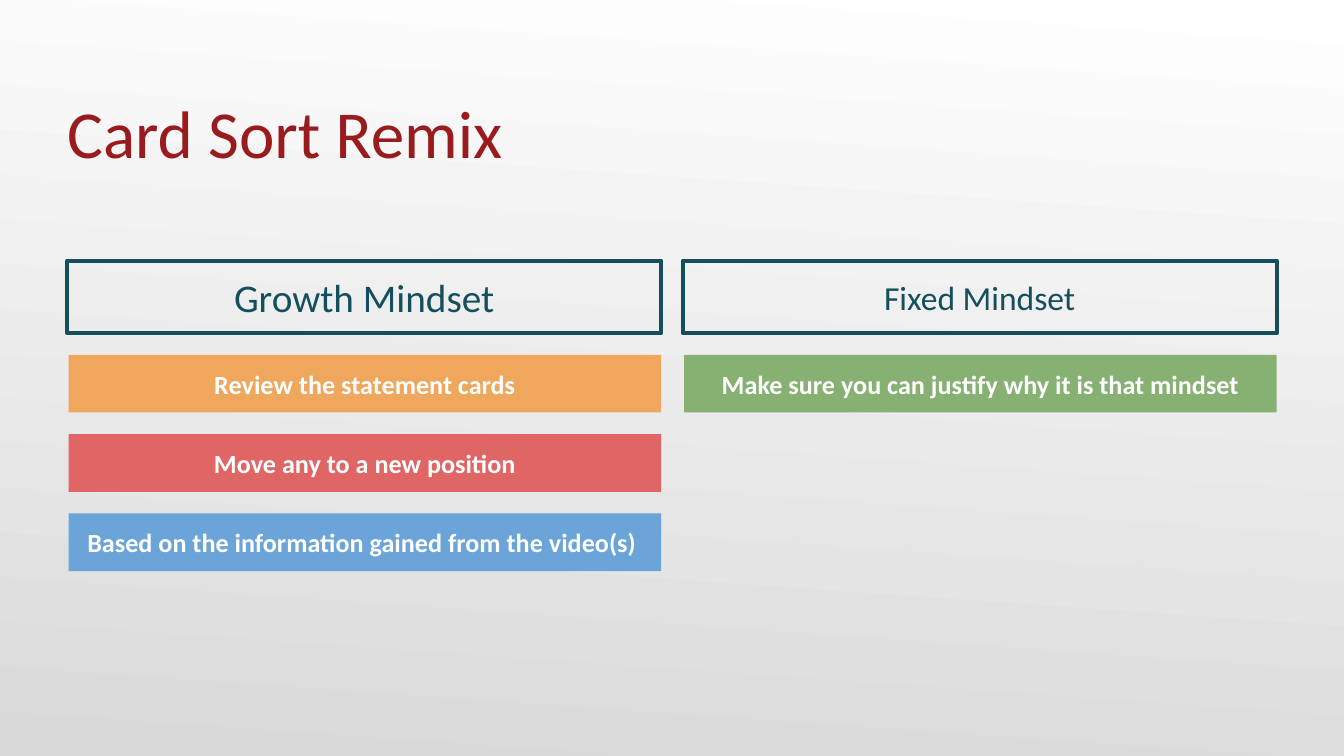
"""Build the Card Sort Remix slide: two headed columns of coloured cards."""
from dataclasses import dataclass

from pptx import Presentation
from pptx.dml.color import RGBColor
from pptx.enum import shapes, text
from pptx.util import Inches, Pt

COLORS = {
    "title": "991B1E", "teal": "134F5C", "white": "FFFFFF", "grey": "D9D9D9",
    "orange": "EEA75C", "red": "E06666", "blue": "6BA4D8", "green": "86B173",
}
FONT = "Calibri"
LEFT, COLUMN_PITCH = 0.5, 4.58
HEADER_TOP, CARD_TOP, CARD_PITCH = 1.94, 2.64, 0.59


@dataclass
class Card:
    label: str
    color: str


@dataclass
class Column:
    heading: str
    size: int
    cards: list[Card]


COLUMNS = [
    Column("Growth Mindset", 21, [
        Card("Review the statement cards", "orange"),
        Card("Move any to a new position", "red"),
        Card("Based on the information gained from the video(s) ", "blue"),
    ]),
    Column("Fixed Mindset", 18, [
        Card("Make sure you can justify why it is that mindset", "green"),
    ]),
]


def rgb(name: str) -> RGBColor:
    return RGBColor.from_string(COLORS[name])


def write(sp, label: str, size: int, color: str, align, anchor, margins, bold=False) -> None:
    tf = sp.text_frame
    tf.word_wrap = True
    tf.auto_size = text.MSO_AUTO_SIZE.NONE
    tf.vertical_anchor = anchor
    tf.margin_left, tf.margin_top, tf.margin_right, tf.margin_bottom = map(Inches, margins)
    p = tf.paragraphs[0]
    p.text = label
    p.alignment = align
    p.font.name, p.font.size, p.font.bold = FONT, Pt(size), bold
    p.font.color.rgb = rgb(color)


def add_box(s, left: float, top: float, width: float, height: float):
    sp = s.shapes.add_shape(shapes.MSO_SHAPE.RECTANGLE, Inches(left), Inches(top),
                            Inches(width), Inches(height))
    sp.shadow.inherit = False
    return sp


def add_header(s, left: float, column: Column) -> None:
    sp = add_box(s, left, HEADER_TOP, 4.42, 0.54)
    sp.fill.background()
    sp.line.color.rgb = rgb("teal")
    sp.line.width = Pt(2.25)
    write(sp, column.heading, column.size, "teal", text.PP_ALIGN.CENTER,
          text.MSO_ANCHOR.MIDDLE, (0.05, 0, 0.05, 0))


def add_card(s, left: float, top: float, card: Card) -> None:
    sp = add_box(s, left, top, 4.41, 0.43)
    sp.fill.solid()
    sp.fill.fore_color.rgb = rgb(card.color)
    sp.line.fill.background()
    write(sp, card.label, 14, "white", text.PP_ALIGN.CENTER,
          text.MSO_ANCHOR.MIDDLE, (0.1,) * 4, bold=True)


def set_background(s) -> None:
    fill = s.background.fill
    fill.gradient()
    fill.gradient_angle = 360 - 94
    for stop, position, color in zip(fill.gradient_stops, (0, 1), ("white", "grey")):
        stop.position = position
        stop.color.rgb = rgb(color)


def add_title(s, label: str) -> None:
    sp = s.shapes.title
    sp.left, sp.top, sp.width, sp.height = map(Inches, (LEFT, 0.34, 9, 0.94))
    write(sp, label, 36, "title", text.PP_ALIGN.LEFT,
          text.MSO_ANCHOR.BOTTOM, (0, 0.05, 0, 0))


def main() -> None:
    prs = Presentation()
    prs.slide_width, prs.slide_height = Inches(10), Inches(10 * 9 / 16)
    s = prs.slides.add_slide(prs.slide_layouts[5])
    set_background(s)
    add_title(s, "Card Sort Remix")
    for i, column in enumerate(COLUMNS):
        left = LEFT + i * COLUMN_PITCH
        add_header(s, left, column)
        for j, card in enumerate(column.cards):
            add_card(s, left + 0.01, CARD_TOP + j * CARD_PITCH, card)
    prs.save("out.pptx")


if __name__ == "__main__":
    main()
